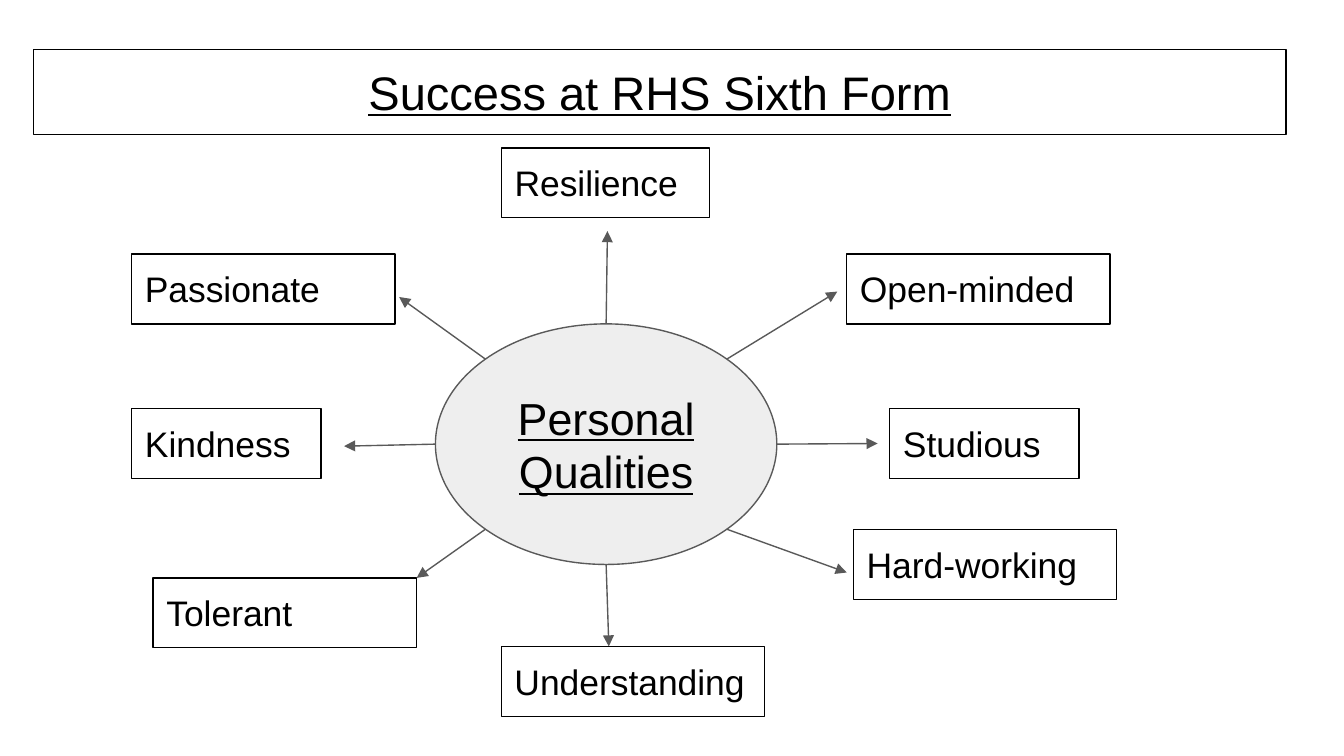
from dataclasses import dataclass
from math import cos, radians, sin

from lxml.etree import SubElement
from pptx import Presentation
from pptx.dml.color import RGBColor
from pptx.enum.shapes import MSO_CONNECTOR, MSO_SHAPE
from pptx.enum.text import MSO_ANCHOR, MSO_AUTO_SIZE, PP_ALIGN
from pptx.oxml.ns import qn
from pptx.util import Inches, Pt


@dataclass(frozen=True)
class Theme:
    font: str = "Arial"
    ink: RGBColor = RGBColor(0, 0, 0)
    grey: RGBColor = RGBColor(0x59, 0x59, 0x59)
    hub_fill: RGBColor = RGBColor(0xEE, 0xEE, 0xEE)
    title_size: float = 25.2
    hub_size: float = 24
    label_size: float = 19
    line_width: float = 0.75


THEME = Theme()
HUB_LEFT, HUB_TOP, HUB_WIDTH, HUB_HEIGHT = 3.24, 2.41, 2.54, 1.79
LABEL_HEIGHT = 0.52

# label, left, top, width, angle on the hub (clockwise from the right), arrow tip
QUALITIES = [
    ("Studious", 6.62, 3.04, 1.41, 0, (6.53, 3.3)),
    ("Hard-working", 6.35, 3.94, 1.96, 45, (6.3, 4.26)),
    ("Understanding", 3.73, 4.81, 1.96, 90, (4.53, 4.81)),
    ("Tolerant", 1.14, 4.3, 1.96, 135, (3.1, 4.3)),
    ("Kindness", 0.98, 3.04, 1.41, 180, (2.56, 3.32)),
    ("Passionate", 0.98, 1.89, 1.96, 225, (2.97, 2.21)),
    ("Resilience", 3.73, 1.1, 1.55, 270, (4.52, 1.72)),
    ("Open-minded", 6.3, 1.89, 1.96, 315, (6.23, 2.17)),
]


def set_line(line, color):
    line.color.rgb = color
    line.width = Pt(THEME.line_width)


def set_text(shape, text, size, alignment, anchor=MSO_ANCHOR.TOP, underline=False):
    frame = shape.text_frame
    frame.text = text
    frame.word_wrap = True
    frame.auto_size = MSO_AUTO_SIZE.NONE
    frame.vertical_anchor = anchor
    frame.margin_left = frame.margin_right = Inches(0.1)
    frame.margin_top = frame.margin_bottom = Inches(0.1)
    paragraph = frame.paragraphs[0]
    paragraph.alignment = alignment
    font = paragraph.font
    font.name = THEME.font
    font.size = Pt(size)
    font.color.rgb = THEME.ink
    font.underline = underline


def add_title(slide, text):
    title = slide.shapes.title
    title.left, title.top = Inches(0.25), Inches(0.37)
    title.width, title.height = Inches(9.32), Inches(0.63)
    set_line(title.line, THEME.ink)
    set_text(title, text, THEME.title_size, PP_ALIGN.CENTER, underline=True)


def add_hub(slide, text):
    hub = slide.shapes.add_shape(
        MSO_SHAPE.OVAL, Inches(HUB_LEFT), Inches(HUB_TOP),
        Inches(HUB_WIDTH), Inches(HUB_HEIGHT))
    hub.shadow.inherit = False
    hub.fill.solid()
    hub.fill.fore_color.rgb = THEME.hub_fill
    set_line(hub.line, THEME.grey)
    set_text(hub, text, THEME.hub_size, PP_ALIGN.CENTER, MSO_ANCHOR.MIDDLE, underline=True)


def add_label(slide, text, left, top, width):
    label = slide.shapes.add_textbox(
        Inches(left), Inches(top), Inches(width), Inches(LABEL_HEIGHT))
    set_line(label.line, THEME.ink)
    set_text(label, text, THEME.label_size, PP_ALIGN.LEFT)


def add_arrow(slide, angle, tip):
    """Draw an arrow from the hub's edge at the given angle to the tip."""
    start_x = HUB_LEFT + HUB_WIDTH / 2 * (1 + cos(radians(angle)))
    start_y = HUB_TOP + HUB_HEIGHT / 2 * (1 + sin(radians(angle)))
    arrow = slide.shapes.add_connector(
        MSO_CONNECTOR.STRAIGHT, Inches(start_x), Inches(start_y),
        Inches(tip[0]), Inches(tip[1]))
    set_line(arrow.line, THEME.grey)
    SubElement(arrow.line._get_or_add_ln(), qn("a:tailEnd"), type="triangle")
    SubElement(arrow._element.spPr, qn("a:effectLst"))


def main():
    presentation = Presentation()
    presentation.slide_width = Inches(10)
    presentation.slide_height = Inches(10) * 9 // 16
    slide = presentation.slides.add_slide(presentation.slide_layouts[5])
    add_title(slide, "Success at RHS Sixth Form")
    add_hub(slide, "Personal Qualities")
    for text, left, top, width, angle, tip in QUALITIES:
        add_arrow(slide, angle, tip)
        add_label(slide, text, left, top, width)
    presentation.save("out.pptx")


if __name__ == "__main__":
    main()
